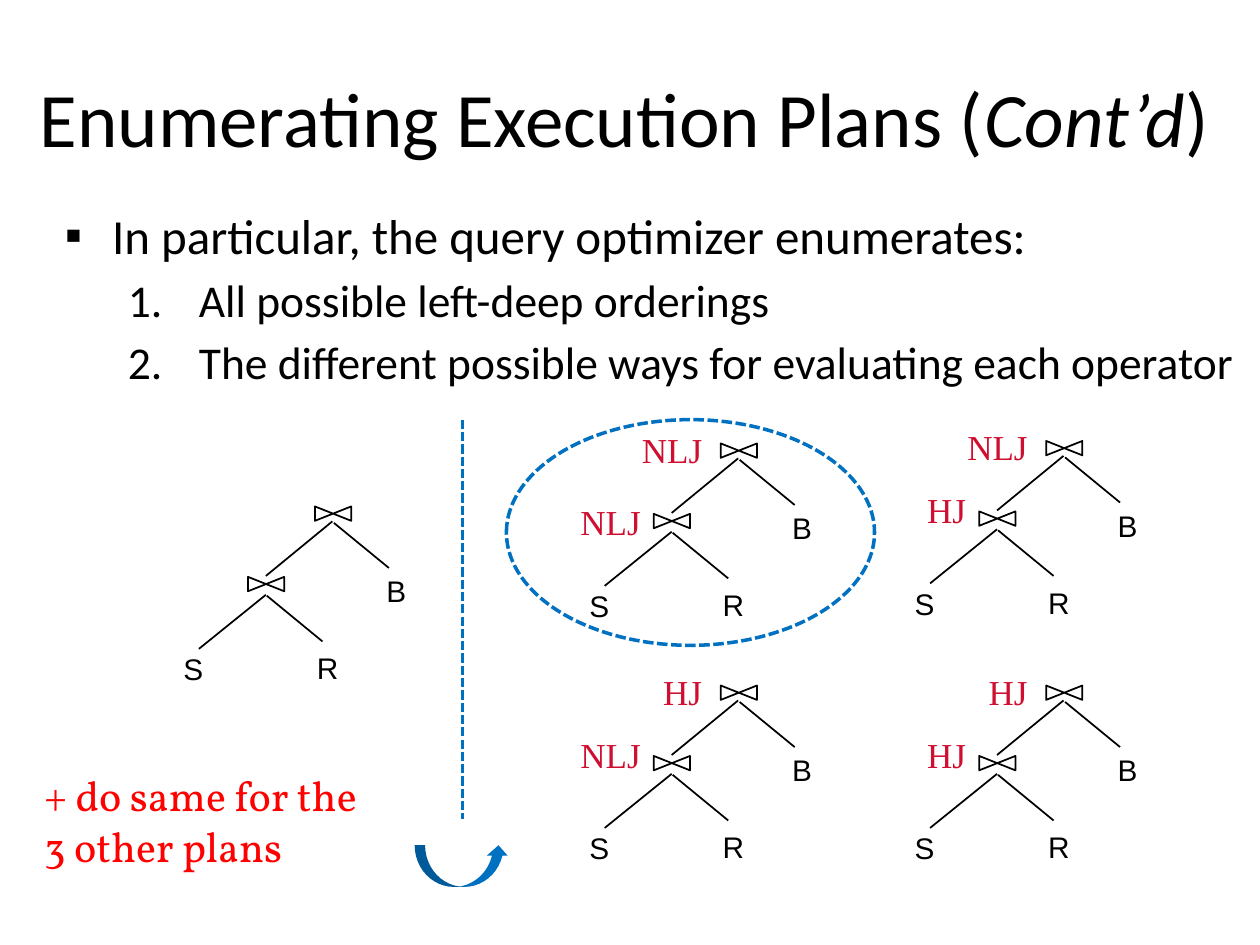
from dataclasses import dataclass

import pptx
import pptx.dml.color
import pptx.enum.dml
import pptx.enum.shapes
import pptx.enum.text
import pptx.util
from lxml import etree
from pptx.oxml.ns import qn
from pptx.util import Cm


@dataclass(frozen=True)
class Theme:
    black: str = "000000"
    crimson: str = "CF0E30"
    red: str = "FF0000"
    blue: str = "0070C0"
    heading: tuple = ("Calibri", 44)
    bullet: tuple = ("Calibri", 28)
    item: tuple = ("Calibri", 26)
    note: tuple = ("Vollkorn", 24)
    method: tuple = ("Times New Roman", 20)
    relation: tuple = ("Arial", 17)


THEME = Theme()

# Offsets in cm from a tree's origin: left of the lower join, top of the upper.
JOIN_WIDTH, JOIN_HEIGHT = 0.73, 0.29
JOINS = [(0, 1.42), (1.35, 0)]
EDGES = [
    (1.7, 0.3, 0.36, 1.4),
    (1.73, 0.33, 2.84, 1.24),
    (0.36, 1.78, -0.99, 2.87),
    (0.38, 1.8, 1.5, 2.72),
]
RELATIONS = [("R", 1.14, 2.77), ("S", -1.55, 2.79), ("B", 2.54, 1.22)]
METHOD_WIDTHS = {"HJ": 1.3, "NLJ": 1.73}


def color(value):
    return pptx.dml.color.RGBColor.from_string(value)


def set_font(paragraph, style, ink):
    name, size = style
    paragraph.font.name = name
    paragraph.font.size = pptx.util.Pt(size)
    paragraph.font.color.rgb = color(ink)


def set_line(shape, ink, width, dashed=False):
    shape.line.color.rgb = color(ink)
    shape.line.width = pptx.util.Pt(width)
    if dashed:
        shape.line.dash_style = pptx.enum.dml.MSO_LINE.SQUARE_DOT


def add_box(shapes, left, top, width, height, wrap=True):
    box = shapes.add_textbox(Cm(left), Cm(top), Cm(width), Cm(height))
    box.text_frame.word_wrap = wrap
    return box.text_frame


def add_label(shapes, text, place, style, ink, wrap=False):
    paragraph = add_box(shapes, *place, wrap=wrap).paragraphs[0]
    paragraph.text = text
    set_font(paragraph, style, ink)


def add_line(shapes, start_x, start_y, end_x, end_y, ink, width, dashed=False):
    line = shapes.add_connector(
        pptx.enum.shapes.MSO_CONNECTOR.STRAIGHT,
        Cm(start_x), Cm(start_y), Cm(end_x), Cm(end_y))
    set_line(line, ink, width, dashed)
    etree.SubElement(line._element.spPr, qn("a:effectLst"))


def add_join(shapes, left, top):
    """Draw the bow tie that stands for a join."""
    right, bottom = left + JOIN_WIDTH, top + JOIN_HEIGHT
    builder = shapes.build_freeform(Cm(left), Cm(top))
    corners = [(left, bottom), (right, top), (right, bottom)]
    builder.add_line_segments([(Cm(x), Cm(y)) for x, y in corners], close=True)
    join = builder.convert_to_shape()
    join.fill.background()
    join.shadow.inherit = False
    set_line(join, THEME.black, 1)


def add_tree(page, left, top):
    shapes = page.shapes.add_group_shape().shapes
    for x, y in JOINS:
        add_join(shapes, left + x, top + y)
    for x1, y1, x2, y2 in EDGES:
        add_line(shapes, left + x1, top + y1, left + x2, top + y2, THEME.black, 1)
    for name, x, y in RELATIONS:
        add_label(shapes, name, (left + x, top + y, 0.94, 0.97),
                  THEME.relation, THEME.black)


def add_plan(page, left, top, upper, lower, lower_drop=0.84):
    """Draw a tree with the method of each join at its left."""
    add_tree(page, left, top)
    for method, right, drop in [(upper, 1.24, -0.43), (lower, 0, lower_drop)]:
        width = METHOD_WIDTHS[method]
        add_label(page.shapes, method, (left + right - width, top + drop, width, 1.09),
                  THEME.method, THEME.crimson)


def add_title(page):
    frame = add_box(page.shapes, 0.2, 0.76, 24.77, 3.18)
    frame.vertical_anchor = pptx.enum.text.MSO_ANCHOR.MIDDLE
    paragraph = frame.paragraphs[0]
    paragraph.alignment = pptx.enum.text.PP_ALIGN.CENTER
    for text, italic in [("Enumerating Execution Plans (", False),
                         ("Cont’d", True), (")", False)]:
        span = paragraph.add_run()
        span.text = text
        span.font.italic = italic
    set_font(paragraph, THEME.heading, THEME.black)


def format_item(paragraph, text, style, margin, hanging, bullet, **attributes):
    paragraph.text = text
    paragraph.space_before = pptx.util.Pt(4.3)
    properties = paragraph._p.get_or_add_pPr()
    properties.set("marL", str(Cm(margin)))
    properties.set("indent", str(-Cm(hanging)))
    etree.SubElement(properties, qn("a:buFont"), typeface="Arial")
    etree.SubElement(properties, qn(bullet), **attributes)
    set_font(paragraph, style, THEME.black)


def add_body(page):
    frame = add_box(page.shapes, 1.06, 4.02, 24.34, 14.6)
    format_item(frame.paragraphs[0], "In particular, the query optimizer enumerates:",
                THEME.bullet, 0.95, 0.95, "a:buChar", char="▪")
    for text in ["All possible left-deep orderings",
                 "The different possible ways for evaluating each operator"]:
        paragraph = frame.add_paragraph()
        paragraph.level = 1
        format_item(paragraph, text, THEME.item, 2.7, 1.43,
                    "a:buAutoNum", type="arabicPeriod")


def add_highlight(page):
    ellipse = page.shapes.add_shape(
        pptx.enum.shapes.MSO_SHAPE.OVAL, Cm(10.21), Cm(8.46), Cm(7.42), Cm(4.55))
    ellipse.fill.background()
    ellipse.shadow.inherit = False
    set_line(ellipse, THEME.blue, 2, dashed=True)


def add_arrow(page):
    arrow = page.shapes.add_shape(
        pptx.enum.shapes.MSO_SHAPE.CURVED_UP_ARROW,
        Cm(8.36), Cm(17.04), Cm(1.9), Cm(0.84))
    arrow.fill.solid()
    arrow.fill.fore_color.rgb = color(THEME.blue)
    arrow.line.fill.background()
    arrow.shadow.inherit = False


def main():
    deck = pptx.Presentation()
    deck.slide_width, deck.slide_height = Cm(25.4), Cm(19.05)
    page = deck.slides.add_slide(deck.slide_layouts[6])

    add_title(page)
    add_body(page)
    add_tree(page, 5, 10.21)
    add_plan(page, 19.74, 13.82, "HJ", "HJ")
    add_plan(page, 13.18, 13.82, "HJ", "NLJ")
    add_plan(page, 19.74, 8.89, "NLJ", "HJ")
    add_plan(page, 13.18, 8.94, "NLJ", "NLJ", lower_drop=1.02)
    add_label(page.shapes, "+ do same for the 3 other plans",
              (0.64, 15.39, 6.91, 2.31), THEME.note, THEME.red, wrap=True)
    add_highlight(page)
    add_line(page.shapes, 9.32, 8.46, 9.32, 16.51, THEME.blue, 1.75, dashed=True)
    add_arrow(page)

    deck.save("out.pptx")


if __name__ == "__main__":
    main()
